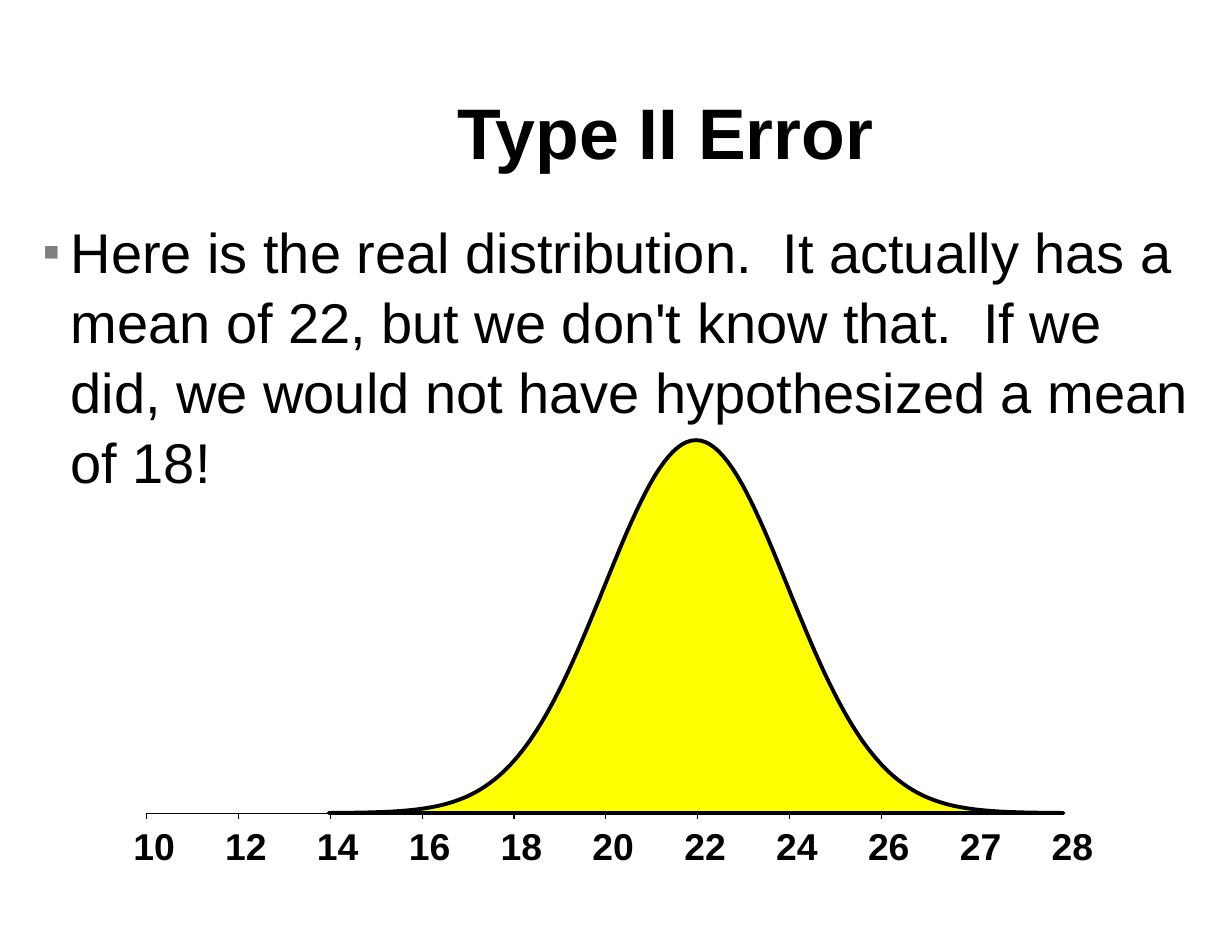
import math

from lxml import etree
from pptx import Presentation
from pptx import util as u
from pptx.dml.color import RGBColor
from pptx.enum import shapes, text
from pptx.oxml import ns

# Content
TITLE = "Type II Error"
BODY = ("Here is the real distribution.  It actually has a mean of 22, "
        "but we don't know that.  If we did, we would not have "
        "hypothesized a mean of 18!")
AXIS_LABELS = ["10", "12", "14", "16", "18", "20", "22", "24", "26", "27", "28"]

FONT = "Arial"
BLACK = RGBColor(0, 0, 0)
YELLOW = RGBColor(255, 255, 0)

# Axis and curve geometry, in inches; one tick step is one standard deviation
AXIS_LEFT, AXIS_Y, STEP = 1.31, 7.26, 0.82
TICK_COUNT, TICK_LENGTH = 9, 0.05
LABEL_LEFT, LABEL_TOP = 1.19, 7.35
MEAN_X, PEAK, REACH, POINTS = 6.215, 3.33, 4, 160


def add_text(page, words, left, top, width, height, size, bold=False, wrap=True):
    box = page.shapes.add_textbox(*map(u.Inches, (left, top, width, height)))
    frame = box.text_frame
    frame.word_wrap = wrap
    frame.margin_left = frame.margin_right = 0
    frame.margin_top = frame.margin_bottom = 0
    para = frame.paragraphs[0]
    para.text = words
    para.font.name = FONT
    para.font.size = u.Pt(size)
    para.font.bold = bold
    para.font.color.rgb = BLACK
    return frame


def add_line(page, x1, y1, x2, y2):
    line = page.shapes.add_connector(
        shapes.MSO_CONNECTOR.STRAIGHT, *map(u.Inches, (x1, y1, x2, y2)))
    line.line.color.rgb = BLACK
    line.line.width = u.Pt(0.75)
    etree.SubElement(line._element.spPr, ns.qn("a:effectLst"))


def add_bullet(para):
    props = para._p.get_or_add_pPr()
    props.set("marL", str(u.Inches(0.24)))
    props.set("indent", str(u.Inches(-0.24)))
    color = etree.Element(ns.qn("a:buClr"))
    etree.SubElement(color, ns.qn("a:srgbClr"), val="808080")
    size = etree.Element(ns.qn("a:buSzPct"), val="46000")
    font = etree.Element(ns.qn("a:buFont"), typeface=FONT)
    mark = etree.Element(ns.qn("a:buChar"), char="■")
    spacing = props.find(ns.qn("a:lnSpc"))
    for element in (mark, font, size, color):
        spacing.addnext(element)


def add_bell_curve(page):
    points = []
    for i in range(POINTS + 1):
        z = REACH * (2 * i / POINTS - 1)
        height = PEAK * math.exp(-z * z / 2)
        points.append((u.Inches(MEAN_X + z * STEP), u.Inches(AXIS_Y - height)))
    builder = page.shapes.build_freeform(*points[0])
    builder.add_line_segments(points[1:], close=True)
    curve = builder.convert_to_shape()
    curve.shadow.inherit = False
    curve.fill.solid()
    curve.fill.fore_color.rgb = YELLOW
    curve.line.color.rgb = BLACK
    curve.line.width = u.Pt(2.5)


def main():
    deck = Presentation()
    deck.slide_width, deck.slide_height = u.Inches(11), u.Inches(8.5)
    page = deck.slides.add_slide(deck.slide_layouts[6])

    # Title
    title = add_text(page, TITLE, 0.48, 0.38, 10.92, 1.58, 46, bold=True)
    title.vertical_anchor = text.MSO_ANCHOR.MIDDLE
    title.paragraphs[0].alignment = text.PP_ALIGN.CENTER

    # Distribution, axis lines and ticks
    add_bell_curve(page)
    for start in (AXIS_LEFT, AXIS_LEFT + 2 * STEP):
        add_line(page, start, AXIS_Y, start + 8 * STEP, AXIS_Y)
    for i in range(TICK_COUNT):
        x = AXIS_LEFT + i * STEP
        add_line(page, x, AXIS_Y + TICK_LENGTH, x, AXIS_Y)

    # Axis labels
    for i, label in enumerate(AXIS_LABELS):
        add_text(page, label, LABEL_LEFT + i * STEP, LABEL_TOP, 0.45, 0.4, 24,
                 bold=True, wrap=False)

    # Explanation
    body = add_text(page, BODY, 0.39, 1.92, 10.28, 2.45, 36)
    body.paragraphs[0].line_spacing = 1.04
    add_bullet(body.paragraphs[0])

    deck.save("out.pptx")


if __name__ == "__main__":
    main()
